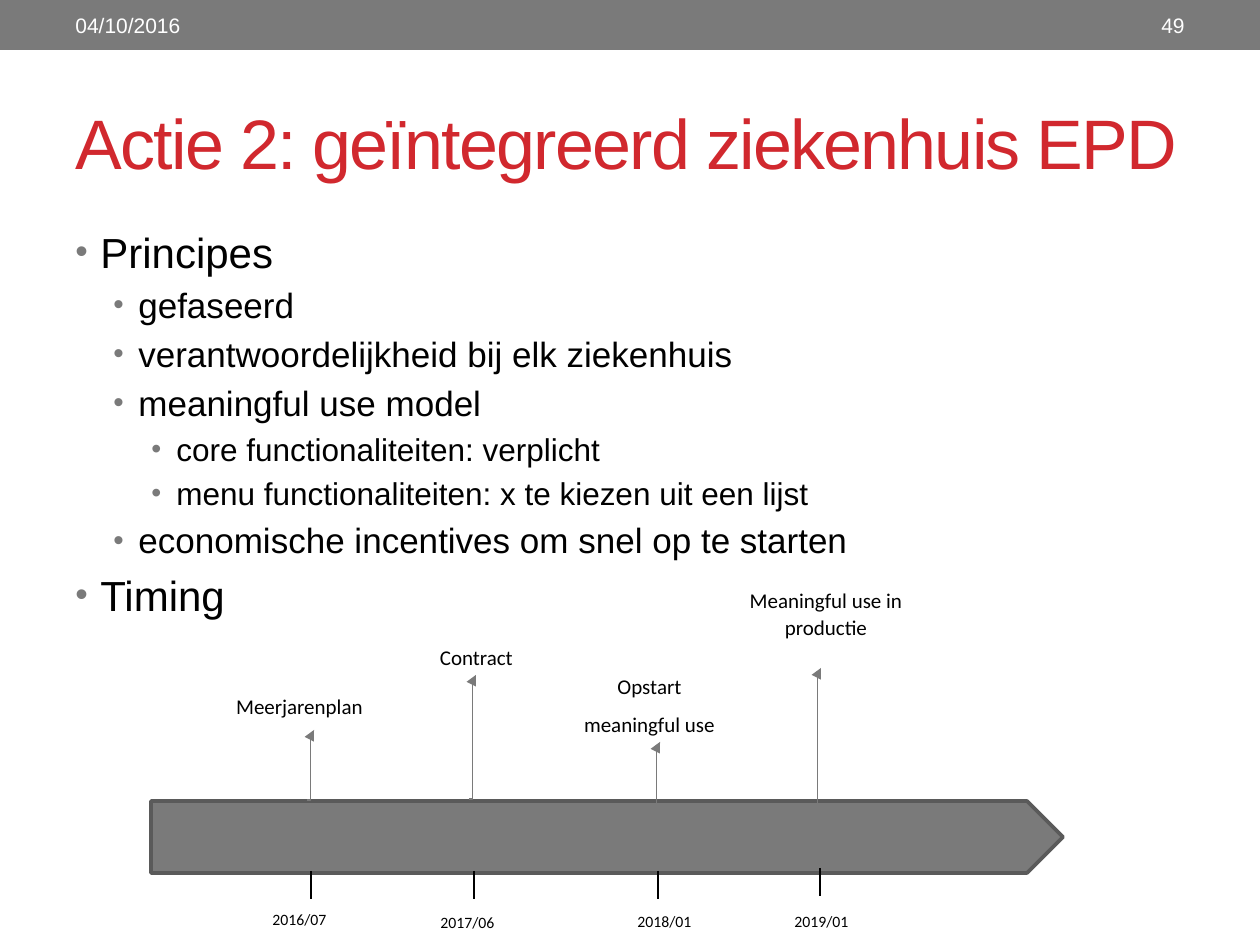
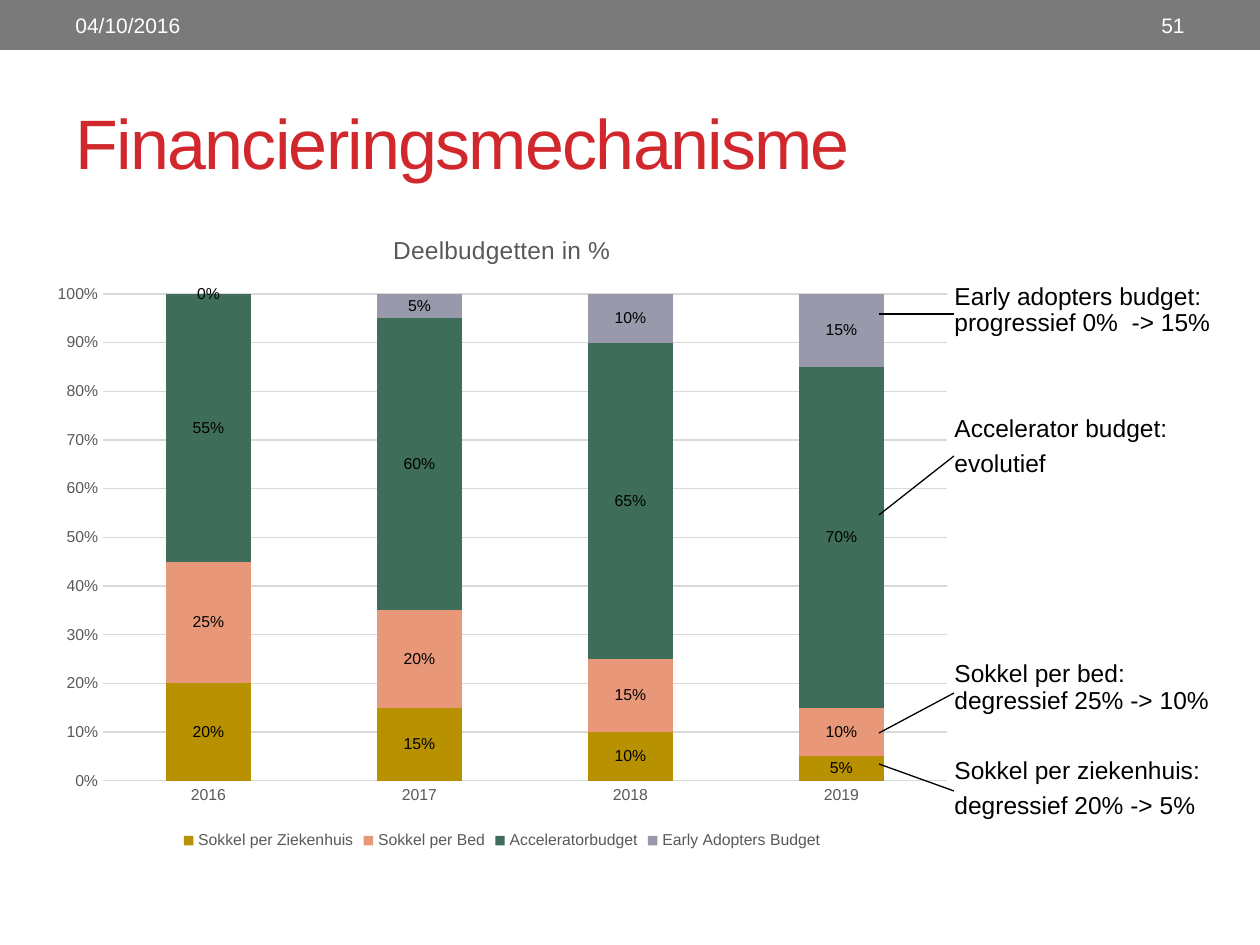
import lxml.etree
import pptx
import pptx.chart.data
import pptx.enum.chart
import pptx.enum.shapes
import pptx.enum.text
import pptx.oxml.ns
import pptx.util

Pt = pptx.util.Pt
qn = pptx.oxml.ns.qn
SHAPE = pptx.enum.shapes.MSO_SHAPE
CONNECTOR = pptx.enum.shapes.MSO_CONNECTOR
ALIGN = pptx.enum.text.PP_ALIGN
ANCHOR = pptx.enum.text.MSO_ANCHOR
CHART = pptx.enum.chart

COLORS = {
    "title": "D1282E", "gray": "7A7A7A", "edge": "5A5A5A",
    "white": "FFFFFF", "black": "000000",
    "axis": "595959", "grid": "D9D9D9",
    "hospital": "B89101", "bed": "E89878",
    "accelerator": "3E6E5A", "early": "989AAC",
}
PX = pptx.util.Inches(1) / 126


def px(*values):
    return [round(v * PX) for v in values]


def rgb(name):
    return pptx.dml.color.RGBColor.from_string(COLORS[name])


def add_xml(parent, tag, **attrs):
    return lxml.etree.SubElement(parent, qn(tag), {k: str(v) for k, v in attrs.items()})


class Deck:
    """Holds the presentation, its style and the current slide."""

    def __init__(self):
        self.prs = pptx.Presentation()
        self.prs.slide_width, self.prs.slide_height = px(1260, 945)
        self.s = None

    def style_font(self, font, color="black", **fmt):
        for key, value in {"name": "Arial", **fmt}.items():
            setattr(font, key, value)
        font.color.rgb = rgb(color)

    def style_line(self, line, color, width=0.75):
        line.color.rgb = rgb(color)
        line.width = Pt(width)

    def slide(self, title, number):
        self.s = self.prs.slides.add_slide(self.prs.slide_layouts[5])
        # Header band with date and slide number
        self.shape(SHAPE.RECTANGLE, (0, 0, 1260, 50), "gray")
        header = {"size": Pt(12), "color": "white", "anchor": ANCHOR.MIDDLE}
        self.text((63, 3, 399, 45), ["04/10/2016"], **header)
        self.text((1050, 3, 147, 45), [number], align=ALIGN.RIGHT, **header)
        # Title placeholder
        sp = self.s.shapes.title
        sp.left, sp.top, sp.width, sp.height = px(63, 73, 1134, 136)
        tf = sp.text_frame
        tf.text = title
        tf.auto_size = pptx.enum.text.MSO_AUTO_SIZE.NONE
        tf.vertical_anchor = ANCHOR.MIDDLE
        p = tf.paragraphs[0]
        p.alignment = ALIGN.LEFT
        r = p.runs[0]
        self.style_font(r.font, "title", size=Pt(40))
        r._r.get_or_add_rPr().set("spc", "-100")

    def shape(self, kind, box, fill, edge=None, width=0.75):
        sp = self.s.shapes.add_shape(kind, *px(*box))
        sp.shadow.inherit = False
        sp.fill.solid()
        sp.fill.fore_color.rgb = rgb(fill)
        if edge:
            self.style_line(sp.line, edge, width)
        else:
            sp.line.fill.background()

    def text(self, box, lines, align=ALIGN.LEFT, anchor=ANCHOR.TOP, inset=None,
             para=None, **font):
        """Adds a text box; para holds values for every paragraph."""
        tf = self.s.shapes.add_textbox(*px(*box)).text_frame
        tf.word_wrap = True
        tf.vertical_anchor = anchor
        if inset:
            dx, dy = px(*inset)
            tf.margin_left = tf.margin_right = dx
            tf.margin_top = tf.margin_bottom = dy
        for i, line in enumerate(lines):
            p = tf.add_paragraph() if i else tf.paragraphs[0]
            r = p.add_run()
            r.text = line
            for key, value in {"alignment": align, **(para or {})}.items():
                setattr(p, key, value)
            self.style_font(r.font, **font)
        return tf

    def bullets(self, box, items):
        levels = [(25, 24, 85), (63, 20, 85), (101, 18, 90)]
        tf = self.text(box, [line for _, line in items])
        for p, (level, _) in zip(tf.paragraphs, items):
            indent, size, percent = levels[level]
            p.level = level
            p.runs[0].font.size = Pt(size)
            left, hang = px(indent, -25)
            pPr = p._p.get_or_add_pPr()
            pPr.set("marL", str(left))
            pPr.set("indent", str(hang))
            add_xml(add_xml(pPr, "a:spcBef"), "a:spcPct", val=20000)
            add_xml(add_xml(pPr, "a:buClr"), "a:srgbClr", val=COLORS["gray"])
            add_xml(pPr, "a:buSzPct", val=percent * 1000)
            add_xml(pPr, "a:buFont", typeface="Arial")
            add_xml(pPr, "a:buChar", char="•")

    def line(self, start, end, color="black", kind=CONNECTOR.STRAIGHT, arrow=False):
        c = self.s.shapes.add_connector(kind, *px(*start, *end))
        self.style_line(c.line, color)
        if arrow:
            add_xml(c.line._get_or_add_ln(), "a:tailEnd", type="triangle")
        add_xml(c.element.spPr, "a:effectLst")

    def stacked_chart(self, box, title, cats, series, plot_box):
        data = pptx.chart.data.CategoryChartData(number_format="0%")
        data.categories = cats
        for name, _, values in series:
            data.add_series(name, values)
        chart = self.s.shapes.add_chart(
            CHART.XL_CHART_TYPE.COLUMN_STACKED, *px(*box), data).chart
        self.style_font(chart.font, size=Pt(10))
        small = {"color": "axis", "size": Pt(9)}

        # Title and legend
        chart.has_title = True
        chart.chart_title.include_in_layout = False
        tf = chart.chart_title.text_frame
        tf.text = title
        self.style_font(tf.paragraphs[0].runs[0].font, "axis", size=Pt(14), bold=False)
        chart.has_legend = True
        chart.legend.position = CHART.XL_LEGEND_POSITION.BOTTOM
        chart.legend.include_in_layout = False
        self.style_font(chart.legend.font, **small)

        # Axes
        for axis in (chart.category_axis, chart.value_axis):
            axis.major_tick_mark = axis.minor_tick_mark = CHART.XL_TICK_MARK.NONE
            self.style_font(axis.tick_labels.font, **small)
        self.style_line(chart.category_axis.format.line, "grid")
        axis = chart.value_axis
        axis.minimum_scale, axis.maximum_scale, axis.major_unit = 0, 1, 0.1
        axis.tick_labels.number_format = "0%"
        axis.tick_labels.number_format_is_linked = False
        axis.format.line.fill.background()
        self.style_line(axis.major_gridlines.format.line, "grid")

        # Columns and labels
        plot = chart.plots[0]
        plot.gap_width, plot.overlap, plot.vary_by_categories = 150, 100, False
        for ser, (_, color, _) in zip(plot.series, series):
            ser.format.fill.solid()
            ser.format.fill.fore_color.rgb = rgb(color)
            labels = ser.data_labels
            labels.show_value = True
            labels.number_format = "0%"
            labels.number_format_is_linked = False
            self.style_font(labels.font, size=Pt(9))

        # Inner plot area, as shares of the chart
        area = chart.element.find(".//" + qn("c:plotArea"))
        for old in area.findall(qn("c:layout")):
            area.remove(old)
        layout = add_xml(area, "c:layout")
        area.insert(0, layout)
        manual = add_xml(layout, "c:manualLayout")
        add_xml(manual, "c:layoutTarget", val="inner")
        for key in "xy":
            add_xml(manual, f"c:{key}Mode", val="edge")
        for key, value, whole in zip("xywh", plot_box, box[2:] * 2):
            add_xml(manual, f"c:{key}", val=round(value / whole, 4))


def timing_slide(deck):
    deck.slide("Actie 2: geïntegreerd ziekenhuis EPD", "49")
    deck.bullets((63, 220, 1134, 672), [
        (0, "Principes"),
        (1, "gefaseerd"),
        (1, "verantwoordelijkheid bij elk ziekenhuis"),
        (1, "meaningful use model"),
        (2, "core functionaliteiten: verplicht"),
        (2, "menu functionaliteiten: x te kiezen uit een lijst"),
        (1, "economische incentives om snel op te starten"),
        (0, "Timing"),
    ])

    # Timeline: label and its box, arrow (x, foot, tip), tick (x, y), date (x, y)
    deck.shape(SHAPE.PENTAGON, (151, 801, 912, 72), "gray", "edge", 2.08)
    milestones = [
        (["Meerjarenplan"], (205, 687, 189, 44), (307, 800, 730),
         (311, 871), "2016/07", (244, 903)),
        (["Contract"], (368, 638, 217, 76), (469, 799, 675),
         (474, 871), "2017/06", (412, 906)),
        (["Opstart", "meaningful use"], (541, 667, 217, 88), (653, 806, 742),
         (658, 871), "2018/01", (609, 905)),
        (["Meaningful use in productie"], (712, 581, 228, 74), (814, 811, 668),
         (820, 868), "2019/01", (766, 905)),
    ]
    style = {"name": "Calibri", "align": ALIGN.CENTER, "inset": (9, 5),
             "para": {"line_spacing": 1.07, "space_after": Pt(6)}}
    for label, box, (x, foot, tip), tick, date, corner in milestones:
        deck.line((x, foot), (x + 7, tip), "gray", CONNECTOR.ELBOW, arrow=True)
        deck.line(tick, (tick[0], tick[1] + 28))
        deck.text((*corner, 111, 44), [date], size=Pt(9), **style)
        deck.text(box, label, size=Pt(12), **style)


def budget_slide(deck):
    deck.slide("Financieringsmechanisme", "51")

    # Callout text: line and space before it in points
    notes = [
        ("Early adopters budget: progressief 0%  -> 15%", 5),
        ("Accelerator budget:", 45),
        ("evolutief", 5),
        ("Sokkel per bed: degressief 25% -> 10%", 105),
        ("Sokkel per ziekenhuis:", 25),
        ("degressief 20% -> 5%", 5),
    ]
    tf = deck.text((879, 278, 372, 591), [line for line, _ in notes],
                   size=Pt(14), para={"line_spacing": 0.9})
    for p, (_, gap) in zip(tf.paragraphs, notes):
        p.space_before = Pt(gap)
        p._p.get_or_add_pPr().set("marL", str(px(63)[0]))

    # Budget shares per year
    deck.stacked_chart((39, 210, 926, 645), "Deelbudgetten in %",
                       ["2016", "2017", "2018", "2019"], [
        ("Sokkel per Ziekenhuis", "hospital", (0.2, 0.15, 0.1, 0.05)),
        ("Sokkel per Bed", "bed", (0.25, 0.2, 0.15, 0.1)),
        ("Acceleratorbudget", "accelerator", (0.55, 0.6, 0.65, 0.7)),
        ("Early Adopters Budget", "early", (0, 0.05, 0.1, 0.15)),
    ], plot_box=(64, 84, 844, 487))

    # Lines from the last column to the callouts
    for y_column, y_note in ((764, 791), (515, 456), (733, 693), (314, 314)):
        deck.line((879, y_column), (954, y_note))


def main():
    deck = Deck()
    timing_slide(deck)
    budget_slide(deck)
    deck.prs.save("out.pptx")


if __name__ == "__main__":
    main()
